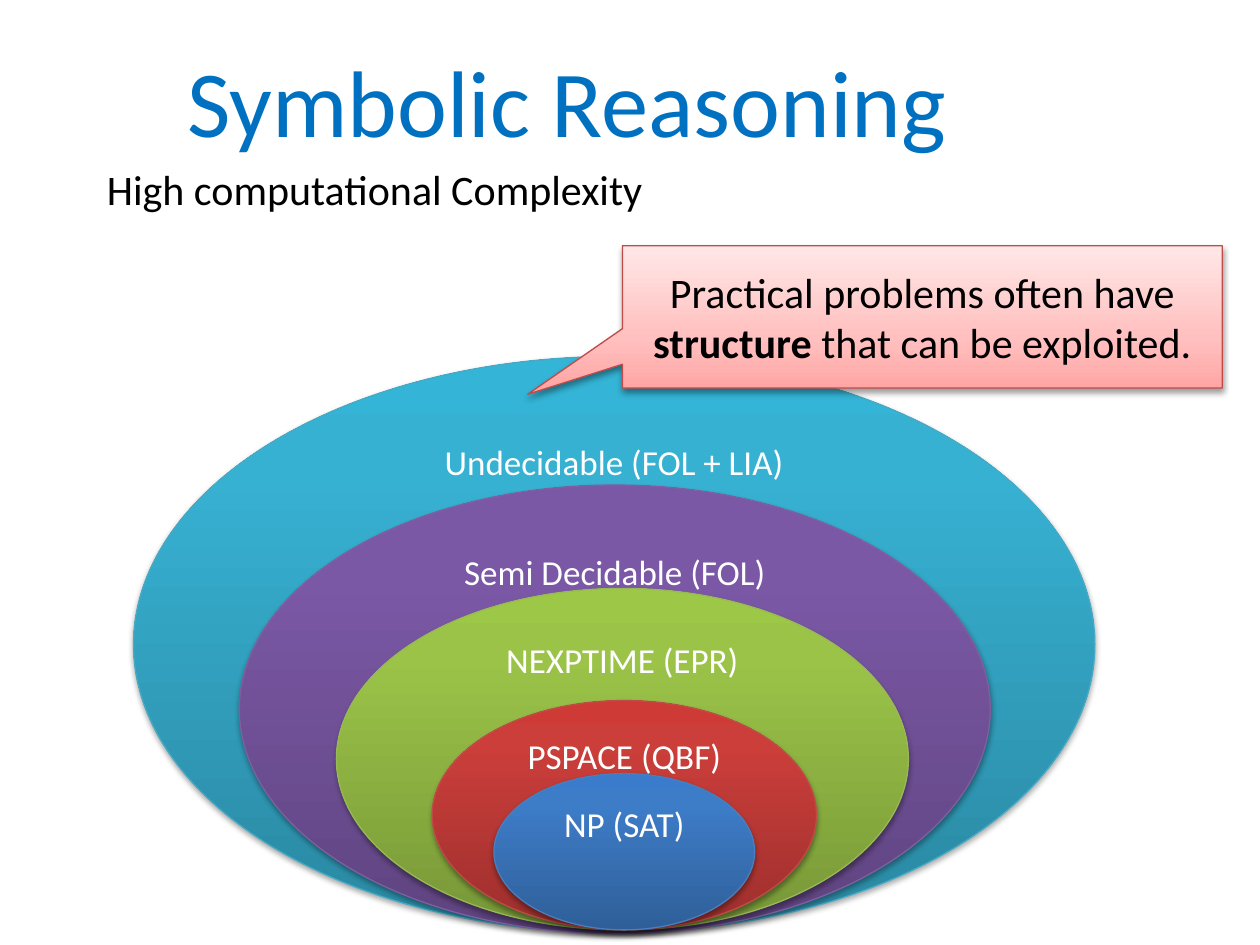
from copy import deepcopy
from dataclasses import dataclass

from lxml.etree import SubElement
from pptx import Presentation
from pptx.dml.color import RGBColor
from pptx.enum.shapes import MSO_SHAPE
from pptx.enum.text import MSO_ANCHOR, PP_ALIGN
from pptx.oxml.ns import qn
from pptx.util import Inches, Pt

FONT = "Calibri"
COLORS = {
    "title": "0070C0",
    "text": "000000",
    "label": "FFFFFF",
    "shadow": "000000",
    "callout_line": "BF4C48",
}


@dataclass
class ComplexityClass:
    label: str
    left: float
    top: float
    width: float
    height: float
    gradient: tuple[str, str, str]
    line: str
    inset: float = 0


CLASSES = [
    ComplexityClass("Undecidable (FOL + LIA)", 1.06, 2.83, 7.63, 4.57,
                    ("2A88A2", "37B1D2", "34B4D6"), "46AAC5"),
    ComplexityClass("Semi Decidable (FOL)", 1.9, 3.85, 5.96, 3.56,
                    ("5F4480", "7B58A6", "7C57A8"), "7D60A0"),
    ComplexityClass("NEXPTIME (EPR)", 2.67, 4.67, 4.54, 2.71,
                    ("779737", "9BC348", "9DC746"), "98B955"),
    ComplexityClass("PSPACE (QBF)", 3.43, 5.56, 3.05, 1.82,
                    ("9C2F2D", "CB3E3A", "CE3B37"), "BF4C48"),
    ComplexityClass("NP (SAT)", 3.92, 6.14, 2.07, 1.24,
                    ("2F5F99", "3D7CC7", "3A7CCB"), "4B7EBC", 0.05),
]
CALLOUT_GRADIENT = ("FFA6A5", "FFC0BF", "FFE7E7")
CALLOUT_TEXT = [
    ("Practical problems often have ", False),
    ("structure", True),
    (" that can be exploited.", False),
]


def style_run(r, size: float, color: str, bold: bool = False) -> None:
    r.font.name = FONT
    r.font.size = Pt(size)
    r.font.bold = bold
    r.font.color.rgb = RGBColor.from_string(color)


def set_text(sp, text: str, size: float, color: str, align: PP_ALIGN) -> None:
    tf = sp.text_frame
    tf.word_wrap = True
    tf.text = text
    p = tf.paragraphs[0]
    p.alignment = align
    style_run(p.runs[0], size, color)


def add_shadow(sp, alpha: int, dist: float) -> None:
    sp.shadow.inherit = False
    effects = sp._element.spPr.find(qn("a:effectLst"))
    shadow = SubElement(effects, qn("a:outerShdw"), blurRad=str(Pt(3.1)),
                        dist=str(Pt(dist)), dir="5400000", rotWithShape="0")
    color = SubElement(shadow, qn("a:srgbClr"), val=COLORS["shadow"])
    SubElement(color, qn("a:alpha"), val=str(alpha * 1000))


def style_shape(sp, gradient: tuple[str, str, str], middle: float, line: str) -> None:
    sp.fill.gradient()
    sp.fill.gradient_angle = 90
    stops = sp._element.spPr.find(qn("a:gradFill")).find(qn("a:gsLst"))
    stops.append(deepcopy(stops[0]))
    for stop, position, color in zip(sp.fill.gradient_stops, (0, middle, 1), gradient):
        stop.position = position
        stop.color.rgb = RGBColor.from_string(color)
    sp.line.color.rgb = RGBColor.from_string(line)
    sp.line.width = Pt(0.75)


def add_class(s, c: ComplexityClass) -> None:
    sp = s.shapes.add_shape(MSO_SHAPE.OVAL, Inches(c.left), Inches(c.top),
                            Inches(c.width), Inches(c.height))
    style_shape(sp, c.gradient, 0.8, c.line)
    add_shadow(sp, 35, 1.8)
    set_text(sp, c.label, 20, COLORS["label"], PP_ALIGN.CENTER)
    tf = sp.text_frame
    tf.vertical_anchor = MSO_ANCHOR.TOP
    tf.margin_top = tf.margin_bottom = Inches(c.inset)


def add_callout(s) -> None:
    sp = s.shapes.add_shape(MSO_SHAPE.RECTANGULAR_CALLOUT, Inches(4.94), Inches(1.95),
                            Inches(4.76), Inches(1.13))
    sp.adjustments[0] = -0.658
    sp.adjustments[1] = 0.544
    style_shape(sp, CALLOUT_GRADIENT, 0.35, COLORS["callout_line"])
    add_shadow(sp, 38, 1.6)
    tf = sp.text_frame
    tf.word_wrap = True
    tf.vertical_anchor = MSO_ANCHOR.MIDDLE
    p = tf.paragraphs[0]
    p.alignment = PP_ALIGN.CENTER
    for text, bold in CALLOUT_TEXT:
        r = p.add_run()
        r.text = text
        style_run(r, 24, COLORS["text"], bold)


def main() -> None:
    prs = Presentation()
    prs.slide_width, prs.slide_height = Inches(10), Inches(7.5)
    s = prs.slides.add_slide(prs.slide_layouts[5])

    title = s.shapes.title
    title.left, title.top = Inches(0), Inches(0.17)
    title.width, title.height = Inches(9), Inches(1.25)
    set_text(title, "Symbolic Reasoning", 54, COLORS["title"], PP_ALIGN.CENTER)
    title.text_frame.vertical_anchor = MSO_ANCHOR.MIDDLE

    body = s.shapes.add_textbox(Inches(0.75), Inches(1.25), Inches(9.25), Inches(1.58))
    set_text(body, "High computational Complexity", 24, COLORS["text"], PP_ALIGN.LEFT)

    for c in CLASSES:
        add_class(s, c)
    add_callout(s)
    prs.save("out.pptx")


if __name__ == "__main__":
    main()
